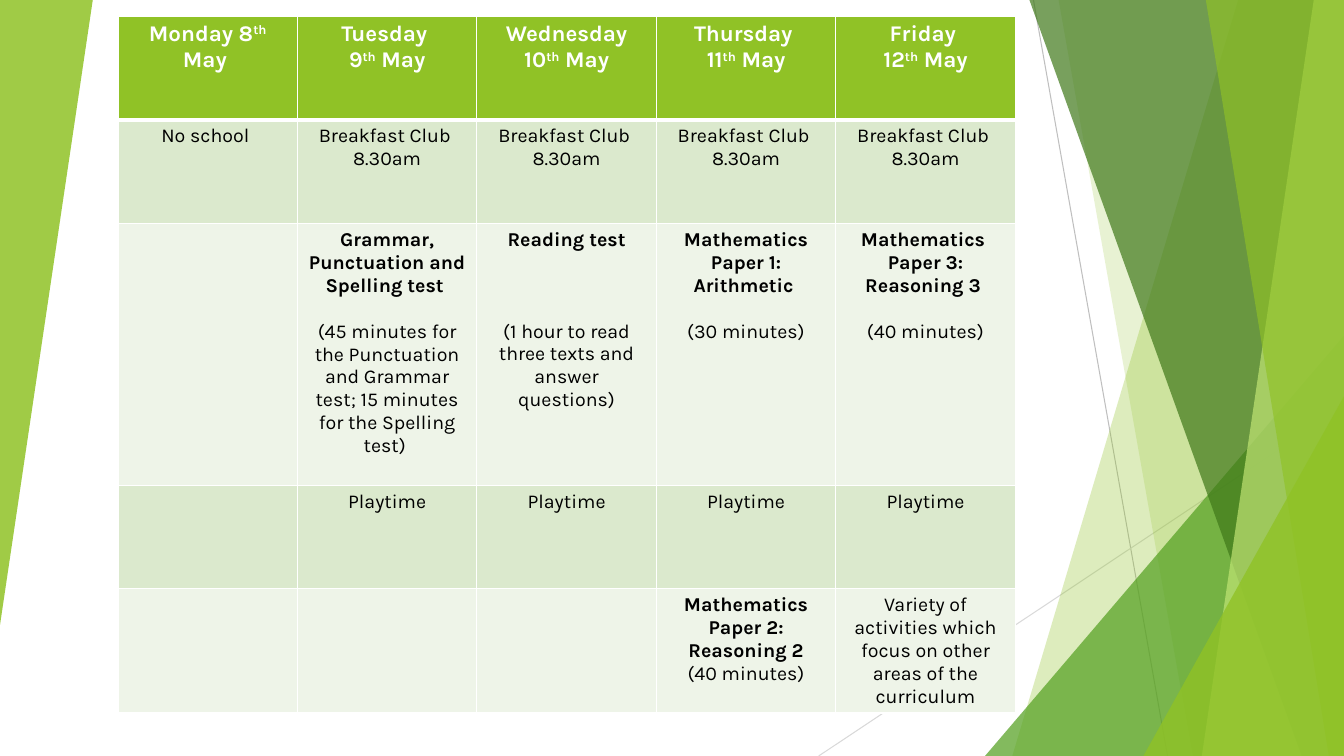
from lxml import etree
from pptx import Presentation
from pptx.dml.color import RGBColor
from pptx.enum.shapes import MSO_CONNECTOR as Connector, MSO_SHAPE as Shape
from pptx.enum.text import PP_ALIGN as Align
from pptx.oxml.ns import qn
from pptx.util import Inches, Pt

WIDTH, HEIGHT = 13.33, 7.5
FONT = "Karla"
LINE_PITCH = 16.3  # height of one body line in points
COLORS = {
    "white": "FFFFFF", "black": "000000", "lime": "90C226", "green": "54A021",
    "forest": "3F7819", "pale": "C0E474", "band": "DBE9CD", "plain": "EEF4E8",
    "ray": "BFBFBF", "faint": "D9D9D9",
}


def color(name):
    return RGBColor.from_string(COLORS[name])


class TimetableSlide:
    def __init__(self, presentation):
        self.slide = presentation.slides.add_slide(presentation.slide_layouts[6])
        self.shapes = self.slide.shapes

    def line(self, start, end, stroke):
        ends = [Inches(value) for value in (*start, *end)]
        connector = self.shapes.add_connector(Connector.STRAIGHT, *ends)
        connector.line.color.rgb = color(stroke)
        connector.line.width = Pt(0.75)
        etree.SubElement(connector._element.spPr, qn("a:effectLst"))

    def paint(self, shape, fill, opacity):
        shape.shadow.inherit = False
        shape.line.fill.background()
        shape.fill.solid()
        shape.fill.fore_color.rgb = color(fill)
        fill_color = shape._element.spPr.find(qn("a:solidFill"))[0]
        etree.SubElement(fill_color, qn("a:alpha")).set("val", str(opacity * 1000))

    def facet(self, top, bottom, fill, opacity):
        """Full-height panel between a slanted edge and the right side."""
        points = [(WIDTH, 0), (WIDTH, HEIGHT), (bottom, HEIGHT)]
        builder = self.shapes.build_freeform(Inches(top), 0)
        builder.add_line_segments([(Inches(x), Inches(y)) for x, y in points])
        self.paint(builder.convert_to_shape(), fill, opacity)

    def triangle(self, box, fill, opacity, rotation=0):
        shape = self.shapes.add_shape(Shape.ISOSCELES_TRIANGLE, *map(Inches, box))
        shape.adjustments[0] = 1
        shape.rotation = rotation
        self.paint(shape, fill, opacity)

    def borders(self, cell, top, bottom):
        properties = cell._tc.get_or_add_tcPr()
        for side, width in (("L", 1), ("R", 1), ("T", top), ("B", bottom)):
            border = etree.SubElement(properties, qn(f"a:ln{side}"), w=str(Pt(width)))
            fill = etree.SubElement(border, qn("a:solidFill"))
            etree.SubElement(fill, qn("a:srgbClr"), val=COLORS["white"])

    def cell_text(self, cell, paragraphs, size, ink):
        """Each paragraph is (text, bold, lines of space before); ^ marks superscript."""
        frame = cell.text_frame
        for index, (text, is_bold, gap) in enumerate(paragraphs):
            paragraph = frame.add_paragraph() if index else frame.paragraphs[0]
            paragraph.alignment = Align.CENTER
            if gap:
                paragraph.space_before = Pt(gap * LINE_PITCH)
            for part, words in enumerate(text.split("^")):
                run = paragraph.add_run()
                run.text = words
                run.font.name = FONT
                run.font.size = Pt(size)
                run.font.bold = is_bold
                run.font.color.rgb = color(ink)
                if part % 2:
                    run._r.get_or_add_rPr().set("baseline", "30000")

    def table(self, left, top, column_width, row_heights, rows):
        columns = len(rows[0])
        frame = self.shapes.add_table(
            len(rows), columns, Inches(left), Inches(top),
            Inches(column_width * columns), Inches(sum(row_heights)))
        table = frame.table
        for column in table.columns:
            column.width = Inches(column_width)
        for row_index, (height, row) in enumerate(zip(row_heights, rows)):
            table.rows[row_index].height = Inches(height)
            header = row_index == 0
            fill = "lime" if header else ("plain", "band")[row_index % 2]
            for column_index, paragraphs in enumerate(row):
                cell = table.cell(row_index, column_index)
                self.borders(cell, 3 if row_index == 1 else 1, 3 if header else 1)
                cell.fill.solid()
                cell.fill.fore_color.rgb = color(fill)
                self.cell_text(cell, paragraphs, 16 if header else 14,
                               "white" if header else "black")


def bold(text):
    return (text, True, 0)


def normal(text, gap=0):
    return (text, False, gap)


def main():
    presentation = Presentation()
    presentation.slide_width = Inches(WIDTH)
    presentation.slide_height = Inches(HEIGHT)
    page = TimetableSlide(presentation)

    # Background rays and facets
    page.line((10.25, 0), (11.58, HEIGHT), "ray")
    page.line((WIDTH, 4.03), (8.12, HEIGHT), "faint")
    page.facet(12.28, 10.04, "lime", 30)
    page.facet(10.5, 11.83, "lime", 20)
    page.triangle((9.77, 3.33, 3.56, 4.17), "green", 72)
    page.facet(10.21, 12.91, "forest", 70)
    page.facet(13.03, 11.92, "pale", 70)
    page.facet(11.96, 13.18, "lime", 65)
    page.triangle((11.34, 3.93, 1.99, 3.57), "lime", 80)
    page.triangle((0, 0, 0.92, 6.2), "lime", 85, rotation=180)

    # Week timetable
    days = [("Tuesday ", 9), ("Wednesday", 10), ("Thursday ", 11), ("Friday ", 12)]
    header = [[bold("Monday 8^th^ May ")]]
    header += [[bold(day), bold(f"{date}^th^ May")] for day, date in days]
    breakfast = [normal("Breakfast Club "), normal("8.30am")]
    morning_tests = [
        [],
        [bold("Grammar, Punctuation and Spelling test "),
         normal("(45 minutes for the Punctuation and Grammar test; "
                "15 minutes for the Spelling test) ", 1)],
        [bold("Reading test"),
         normal("(1 hour to read three texts and answer questions)", 3)],
        [bold("Mathematics"), bold("Paper 1: Arithmetic "), normal("(30 minutes)", 1)],
        [bold("Mathematics "), bold("Paper 3:"), bold("Reasoning 3 "),
         normal("(40 minutes)", 1)],
    ]
    after_playtime = [
        [], [], [],
        [bold("Mathematics"), bold("Paper 2: Reasoning 2"), normal("(40 minutes)")],
        [normal("Variety of activities which focus on other areas of the curriculum")],
    ]
    page.table(1.17, 0.16, 1.78, [1.03, 1.03, 2.6, 1.02, 1.23], [
        header,
        [[normal("No school ")]] + [breakfast] * len(days),
        morning_tests,
        [[]] + [[normal("Playtime")]] * len(days),
        after_playtime,
    ])

    presentation.save("out.pptx")


if __name__ == "__main__":
    main()
